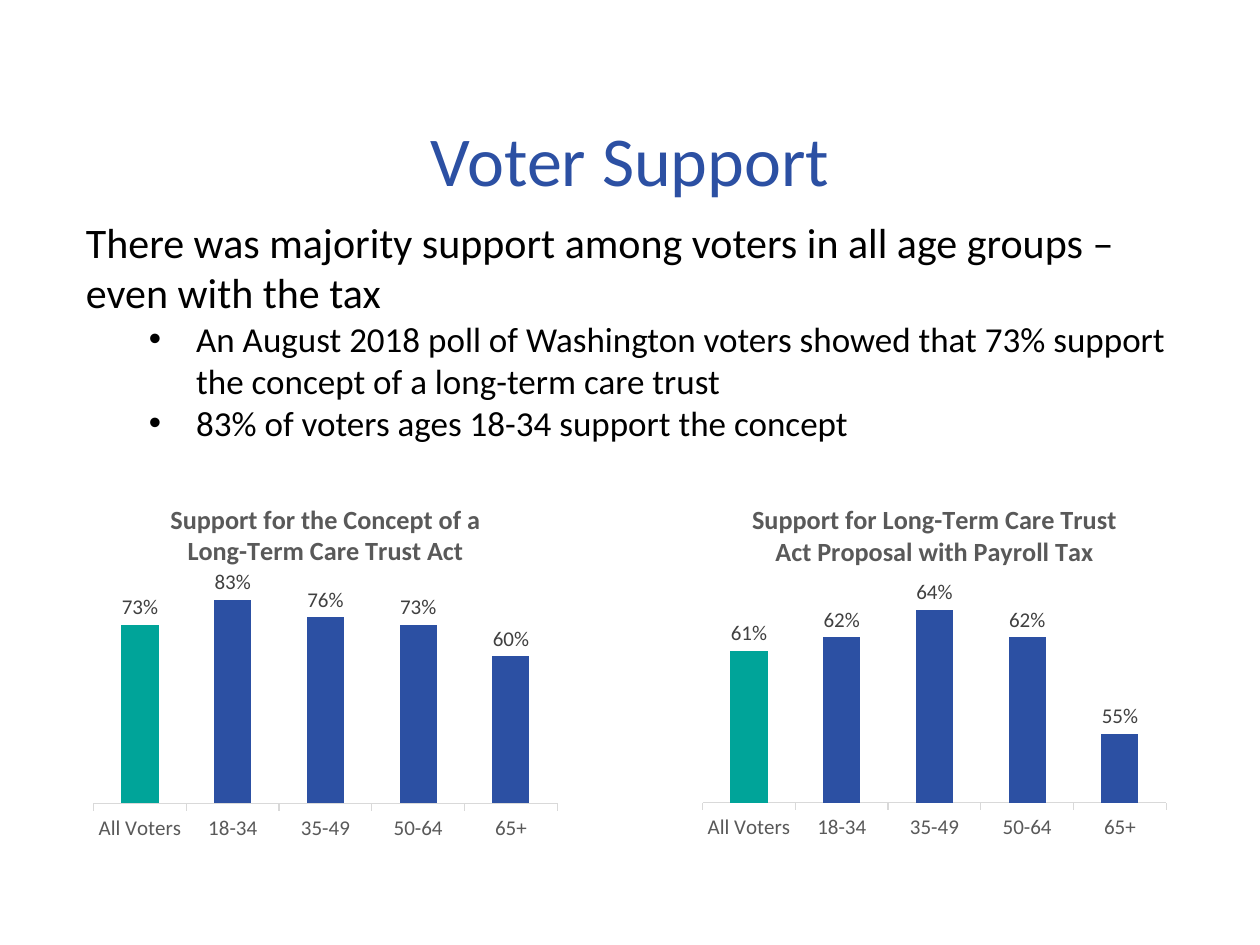
from dataclasses import dataclass

from lxml.etree import SubElement
from pptx import Presentation
from pptx.chart.data import CategoryChartData
from pptx.dml.color import RGBColor
from pptx.enum.chart import XL_CHART_TYPE, XL_LABEL_POSITION, XL_TICK_MARK
from pptx.enum.text import MSO_ANCHOR, MSO_AUTO_SIZE, PP_ALIGN
from pptx.oxml import parse_xml
from pptx.oxml.ns import nsdecls, qn
from pptx.util import Pt


@dataclass(frozen=True)
class Theme:
    font: str = "Calibri"
    blue: RGBColor = RGBColor(0x2C, 0x50, 0xA3)
    teal: RGBColor = RGBColor(0x00, 0xA4, 0x99)
    black: RGBColor = RGBColor(0, 0, 0)
    label_gray: RGBColor = RGBColor(0x40, 0x40, 0x40)
    text_gray: RGBColor = RGBColor(0x59, 0x59, 0x59)
    line_gray: RGBColor = RGBColor(0xD9, 0xD9, 0xD9)
    title_size: int = 40
    lead_size: int = 24
    bullet_size: int = 20
    chart_title_size: int = 15
    chart_label_size: int = 12


THEME = Theme()
AGE_GROUPS = ["All Voters", "18-34", "35-49", "50-64", "65+"]
LEAD = "There was majority support among voters in all age groups – even with the tax"
FINDINGS = [
    "An August 2018 poll of Washington voters showed that 73% support "
    "the concept of a long-term care trust",
    "83% of voters ages 18-34 support the concept",
]


def style_font(font, size, color, bold=False):
    font.name = THEME.font
    font.size = Pt(size)
    font.bold = bold
    font.color.rgb = color


def place_title(slide, text, left, top, width, height):
    title = slide.shapes.title
    title.left, title.top, title.width, title.height = map(Pt, (left, top, width, height))
    frame = title.text_frame
    frame.text = text
    frame.auto_size = MSO_AUTO_SIZE.NONE
    frame.vertical_anchor = MSO_ANCHOR.MIDDLE
    heading = frame.paragraphs[0]
    heading.alignment = PP_ALIGN.CENTER
    style_font(heading.font, THEME.title_size, THEME.blue)


def add_bullet(paragraph, margin, hang):
    paragraph.level = 1
    properties = paragraph._p.get_or_add_pPr()
    properties.set("marL", str(Pt(margin)))
    properties.set("indent", str(-Pt(hang)))
    SubElement(properties, qn("a:buFont"), typeface="Arial")
    SubElement(properties, qn("a:buChar"), char="•")


def add_findings(slide, lead, findings, left, top, width, height):
    frame = slide.shapes.add_textbox(*map(Pt, (left, top, width, height))).text_frame
    frame.word_wrap = True
    frame.text = lead
    style_font(frame.paragraphs[0].font, THEME.lead_size, THEME.black)
    for finding in findings:
        paragraph = frame.add_paragraph()
        paragraph.text = finding
        add_bullet(paragraph, margin=63, hang=27)
        style_font(paragraph.font, THEME.bullet_size, THEME.black)


def fix_plot_area(chart, x, y, w, h):
    """Set the inner plot area as fractions of the chart's box."""
    plot_area = chart._chartSpace.chart.plotArea
    for layout in plot_area.findall(qn("c:layout")):
        plot_area.remove(layout)
    plot_area.insert(0, parse_xml(
        f'<c:layout {nsdecls("c")}><c:manualLayout><c:layoutTarget val="inner"/>'
        '<c:xMode val="edge"/><c:yMode val="edge"/>'
        f'<c:x val="{x}"/><c:y val="{y}"/><c:w val="{w}"/><c:h val="{h}"/>'
        '</c:manualLayout></c:layout>'))


def add_support_chart(slide, title, shares, axis_range, left, top, width, height):
    data = CategoryChartData(number_format="0%")
    data.categories = AGE_GROUPS
    data.add_series("Series 1", shares)
    chart = slide.shapes.add_chart(
        XL_CHART_TYPE.COLUMN_CLUSTERED, *map(Pt, (left, top, width, height)), data).chart
    style_font(chart.font, THEME.chart_label_size, THEME.text_gray)
    chart.has_legend = False

    chart.has_title = True
    chart.chart_title.include_in_layout = False
    chart.chart_title.text_frame.text = title
    for line in chart.chart_title.text_frame.paragraphs:
        style_font(line.font, THEME.chart_title_size, THEME.text_gray, bold=True)

    ages = chart.category_axis
    ages.major_tick_mark = XL_TICK_MARK.OUTSIDE
    ages.format.line.color.rgb = THEME.line_gray
    ages.format.line.width = Pt(0.75)
    style_font(ages.tick_labels.font, THEME.chart_label_size, THEME.text_gray)

    share_axis = chart.value_axis
    share_axis.visible = False
    share_axis.has_major_gridlines = False
    share_axis.minimum_scale, share_axis.maximum_scale = axis_range

    plot = chart.plots[0]
    plot.gap_width = 150
    plot.overlap = -27
    plot.vary_by_categories = False
    bars = plot.series[0]
    bars.format.fill.solid()
    bars.format.fill.fore_color.rgb = THEME.blue
    all_voters = bars.points[0].format.fill
    all_voters.solid()
    all_voters.fore_color.rgb = THEME.teal

    labels = bars.data_labels
    labels.show_value = True
    labels.position = XL_LABEL_POSITION.OUTSIDE_END
    labels.number_format = "0%"
    labels.number_format_is_linked = False
    style_font(labels.font, THEME.chart_label_size, THEME.label_gray)
    fix_plot_area(chart, x=0.02, y=0.27, w=0.96, h=0.6)


def main():
    presentation = Presentation()
    presentation.slide_width, presentation.slide_height = Pt(720), Pt(540)
    slide = presentation.slides.add_slide(presentation.slide_layouts[5])
    add_findings(slide, LEAD, FINDINGS, 42, 120, 636.5, 137)
    place_title(slide, "Voter Support", 36, 66.5, 648, 48)
    add_support_chart(
        slide, "Support for the Concept of a\nLong-Term Care Trust Act",
        [0.73, 0.83, 0.76, 0.73, 0.6], (0, 0.9), 48, 276.5, 276, 210)
    add_support_chart(
        slide, "Support for Long-Term Care Trust Act Proposal with Payroll Tax",
        [0.61, 0.62, 0.64, 0.62, 0.55], (0.5, 0.66), 396, 276, 276, 210)
    presentation.save("out.pptx")


if __name__ == "__main__":
    main()
